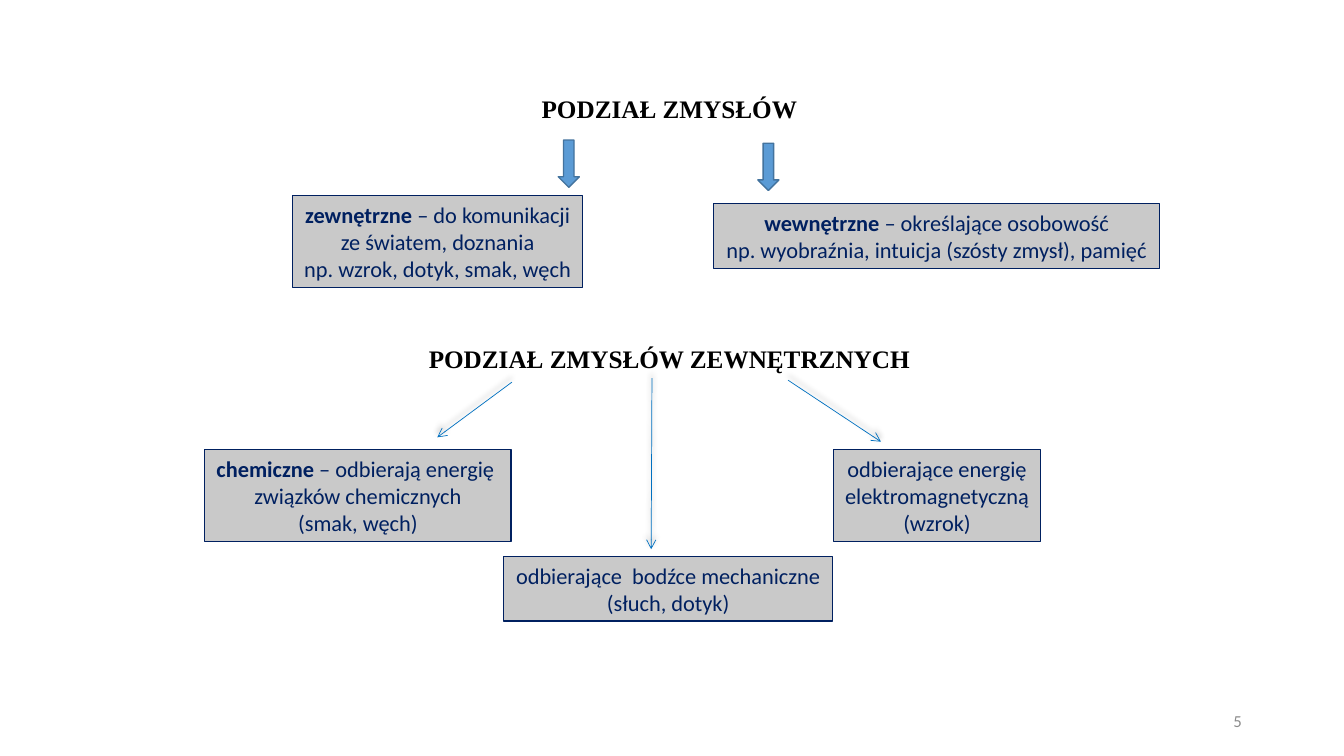
from dataclasses import dataclass

from lxml import etree
from pptx import Presentation
from pptx.dml.color import RGBColor
from pptx.enum import shapes, text
from pptx.oxml import ns
from pptx.util import Cm, Pt

HUES = {
    "ink": "000000",
    "navy": "002060",
    "grey": "C9C9C9",
    "blue": "5B9BD5",
    "edge": "43739E",
    "line": "0070C0",
    "page": "8C8C8C",
}


@dataclass
class Box:
    left: float
    top: float
    width: float
    height: float
    lines: str
    lead: str = ""


@dataclass
class Block:
    left: float
    top: float


@dataclass
class Arrow:
    x1: float
    y1: float
    x2: float
    y2: float


BOXES = [
    Box(7.37, 4.93, 7.32, 2.31,
        " – do komunikacji\nze światem, doznania\nnp. wzrok, dotyk, smak, węch", "zewnętrzne"),
    Box(17.98, 5.13, 11.25, 1.63,
        " – określające osobowość\nnp. wyobraźnia, intuicja (szósty zmysł), pamięć", "wewnętrzne"),
    Box(5.16, 11.33, 7.72, 2.31,
        " – odbierają energię \nzwiązków chemicznych\n(smak, węch)", "chemiczne"),
    Box(12.7, 14.02, 8.28, 1.63, "odbierające  bodźce mechaniczne\n(słuch, dotyk)"),
    Box(21.01, 11.33, 5.21, 2.31, "odbierające energię\nelektromagnetyczną\n(wzrok)"),
]
BLOCKS = [Block(14.07, 3.53), Block(19.1, 3.61)]
ARROWS = [
    Arrow(12.9, 9.63, 11.02, 11.02),
    Arrow(16.43, 9.53, 16.41, 13.84),
    Arrow(19.86, 9.58, 22.2, 11.13),
]


def hue(name: str) -> RGBColor:
    return RGBColor.from_string(HUES[name])


def style(frame, face: str, size: int, tone: str, align, bold: bool = False) -> None:
    for para in frame.paragraphs:
        para.alignment = align
        for run in para.runs:
            run.font.name = face
            run.font.size = Pt(size)
            run.font.bold = bold
            run.font.color.rgb = hue(tone)


def paint(shape, fill: str, line: str, width: float) -> None:
    shape.shadow.inherit = False
    shape.fill.solid()
    shape.fill.fore_color.rgb = hue(fill)
    shape.line.color.rgb = hue(line)
    shape.line.width = Pt(width)


def head(shape, top: float, words: str) -> None:
    shape.left, shape.top = Cm(1.12), Cm(top)
    shape.width, shape.height = Cm(31.5), Cm(1.2)
    frame = shape.text_frame
    frame.word_wrap = True
    frame.vertical_anchor = text.MSO_ANCHOR.MIDDLE
    frame.text = words
    style(frame, "Times New Roman", 18, "ink", text.PP_ALIGN.CENTER, True)


def draw_box(slide, box: Box) -> None:
    shape = slide.shapes.add_shape(shapes.MSO_SHAPE.RECTANGLE, Cm(box.left), Cm(box.top),
                                   Cm(box.width), Cm(box.height))
    paint(shape, "grey", "navy", 0.75)
    frame = shape.text_frame
    frame.word_wrap = False
    frame.text = box.lines
    first = frame.paragraphs[0]
    if box.lead:
        rest = first.text
        first.text = box.lead
        first.add_run().text = rest
    style(frame, "Calibri", 16, "navy", text.PP_ALIGN.CENTER)
    first.runs[0].font.bold = bool(box.lead)


def draw_block(slide, block: Block) -> None:
    shape = slide.shapes.add_shape(shapes.MSO_SHAPE.DOWN_ARROW, Cm(block.left), Cm(block.top),
                                   Cm(0.53), Cm(1.19))
    paint(shape, "blue", "edge", 1)


def draw_arrow(slide, arrow: Arrow) -> None:
    line = slide.shapes.add_connector(shapes.MSO_CONNECTOR.STRAIGHT, Cm(arrow.x1), Cm(arrow.y1),
                                      Cm(arrow.x2), Cm(arrow.y2))
    line.line.color.rgb = hue("line")
    line.line.width = Pt(0.5)
    etree.SubElement(line.line._get_or_add_ln(), ns.qn("a:tailEnd"), type="arrow")
    glow = etree.SubElement(line._element.spPr, ns.qn("a:effectLst"))
    shade = etree.SubElement(glow, ns.qn("a:outerShdw"), blurRad=str(Pt(4)),
                             dist=str(Pt(3)), dir="16200000", rotWithShape="0")
    tone = etree.SubElement(shade, ns.qn("a:srgbClr"), val=HUES["ink"])
    etree.SubElement(tone, ns.qn("a:alpha"), val="40000")


def main() -> None:
    deck = Presentation()
    deck.slide_width, deck.slide_height = Cm(33.87), Cm(19.05)
    slide = deck.slides.add_slide(deck.slide_layouts[5])
    head(slide.shapes.title, 2.12, "PODZIAŁ ZMYSŁÓW")
    head(slide.shapes.add_textbox(0, 0, 0, 0), 8.44, "PODZIAŁ ZMYSŁÓW ZEWNĘTRZNYCH")
    for box in BOXES:
        draw_box(slide, box)
    for block in BLOCKS:
        draw_block(slide, block)
    for arrow in ARROWS:
        draw_arrow(slide, arrow)
    page = slide.shapes.add_textbox(Cm(23.93), Cm(17.65), Cm(7.62), Cm(1.02)).text_frame
    page.word_wrap = True
    page.vertical_anchor = text.MSO_ANCHOR.MIDDLE
    page.text = "5"
    style(page, "Calibri", 12, "page", text.PP_ALIGN.RIGHT)
    deck.save("out.pptx")


if __name__ == "__main__":
    main()
